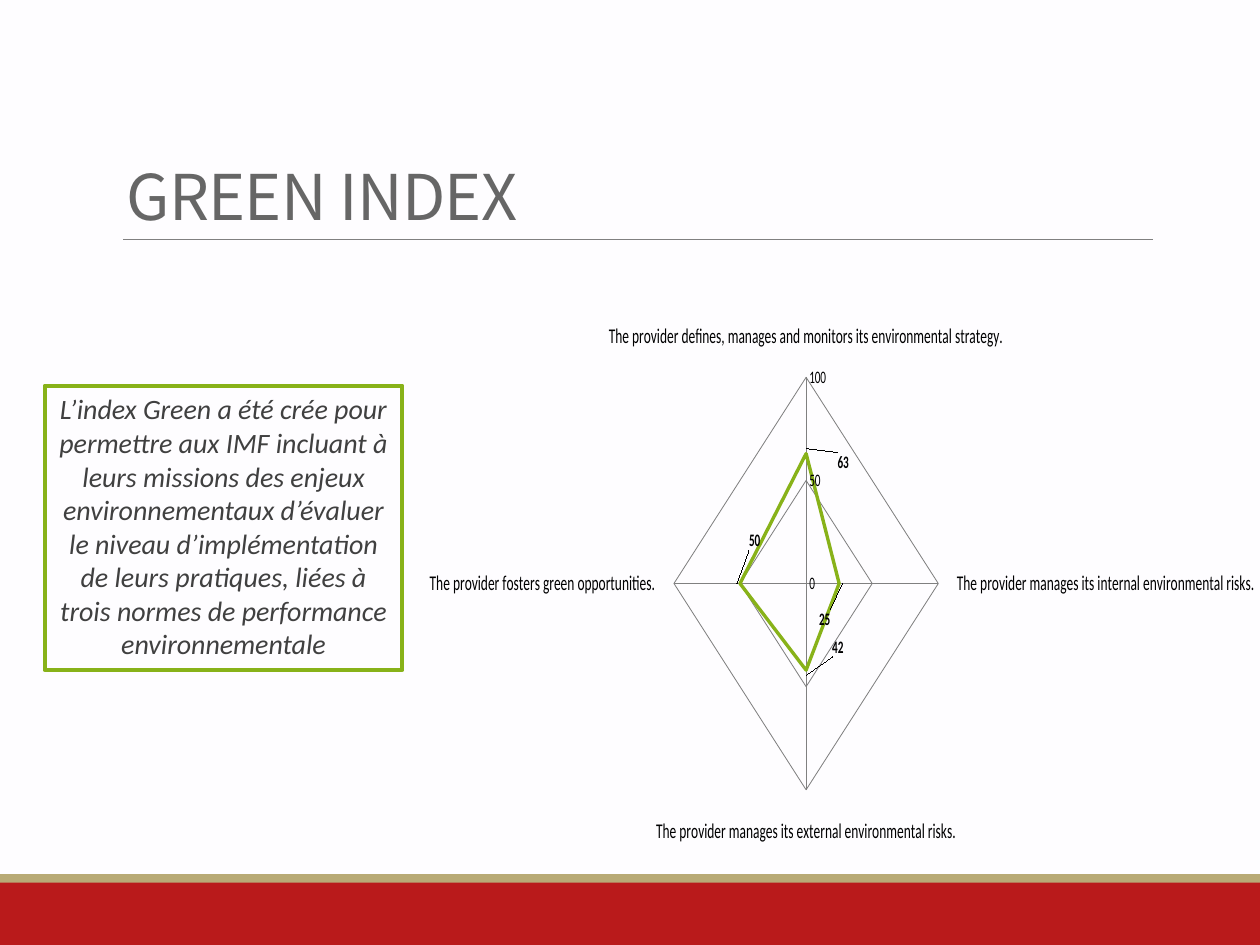
from dataclasses import dataclass

from lxml.etree import SubElement
from pptx import Presentation
from pptx.chart.data import CategoryChartData
from pptx.dml.color import RGBColor
from pptx.enum.chart import XL_CHART_TYPE, XL_TICK_MARK
from pptx.enum.shapes import MSO_CONNECTOR, MSO_SHAPE
from pptx.enum.text import MSO_ANCHOR, PP_ALIGN
from pptx.oxml import parse_xml
from pptx.oxml.ns import nsdecls, qn
from pptx.util import Pt


@dataclass(frozen=True)
class Theme:
    background: str = "FEFDFF"
    red: str = "B91A1B"
    sand: str = "B8AA76"
    green: str = "88B219"
    gray: str = "808080"
    title: str = "666666"
    body: str = "404040"
    black: str = "000000"
    title_font: str = "Noto Sans CJK KR"
    body_font: str = "Calibri"
    title_size: float = 36
    body_size: float = 16
    category_size: float = 12
    label_size: float = 10


def rgb(value):
    return RGBColor.from_string(value)


def layout_xml(x, y, w=None, h=None):
    if w is None:
        values = [("x", x), ("y", y)]
    else:
        values = [("xMode", "edge"), ("yMode", "edge"),
                  ("x", x), ("y", y), ("w", w), ("h", h)]
    target = "" if w is None else '<c:layoutTarget val="inner"/>'
    body = "".join(f'<c:{name} val="{value}"/>' for name, value in values)
    return parse_xml(f'<c:layout {nsdecls("c")}><c:manualLayout>'
                     f'{target}{body}</c:manualLayout></c:layout>')


class Deck:
    def __init__(self, theme, width, height):
        self.theme = theme
        self.prs = Presentation()
        self.prs.slide_width, self.prs.slide_height = Pt(width), Pt(height)
        self.s = self.prs.slides.add_slide(self.prs.slide_layouts[5])
        fill = self.s.background.fill
        fill.solid()
        fill.fore_color.rgb = rgb(theme.background)

    def style(self, font, size, color, name=None):
        font.size = Pt(size)
        font.name = name or self.theme.body_font
        font.color.rgb = rgb(color)

    def title(self, text, x, y, w, h):
        sp = self.s.shapes.title
        sp.left, sp.top, sp.width, sp.height = Pt(x), Pt(y), Pt(w), Pt(h)
        tf = sp.text_frame
        tf.vertical_anchor = MSO_ANCHOR.BOTTOM
        p = tf.paragraphs[0]
        p.alignment = PP_ALIGN.LEFT
        p.line_spacing = 0.85
        r = p.add_run()
        r.text = text
        self.style(r.font, self.theme.title_size, self.theme.title, self.theme.title_font)
        r.font._element.set("spc", "-40")

    def rect(self, x, y, w, h, fill=None, line=None):
        sp = self.s.shapes.add_shape(MSO_SHAPE.RECTANGLE, Pt(x), Pt(y), Pt(w), Pt(h))
        sp.shadow.inherit = False
        if fill:
            sp.fill.solid()
            sp.fill.fore_color.rgb = rgb(fill)
        else:
            sp.fill.background()
        if line:
            sp.line.color.rgb = rgb(line)
            sp.line.width = Pt(2.25)
        else:
            sp.line.fill.background()
        return sp

    def text_box(self, text, x, y, w, h):
        tf = self.rect(x, y, w, h, line=self.theme.green).text_frame
        tf.word_wrap = True
        tf.vertical_anchor = MSO_ANCHOR.TOP
        p = tf.paragraphs[0]
        p.alignment = PP_ALIGN.CENTER
        r = p.add_run()
        r.text = text
        self.style(r.font, self.theme.body_size, self.theme.body)
        r.font.italic = True

    def rule(self, x1, x2, y):
        line = self.s.shapes.add_connector(
            MSO_CONNECTOR.STRAIGHT, Pt(x1), Pt(y), Pt(x2), Pt(y))
        line.line.color.rgb = rgb(self.theme.gray)
        line.line.width = Pt(0.5)
        SubElement(line._element.spPr, qn("a:effectLst"))

    def radar(self, scores, offsets, x, y, w, h):
        t = self.theme
        data = CategoryChartData()
        data.categories = list(scores)
        data.add_series("Series 1", list(scores.values()))
        chart = self.s.shapes.add_chart(
            XL_CHART_TYPE.RADAR, Pt(x), Pt(y), Pt(w), Pt(h), data).chart
        chart.has_legend = False
        chart.has_title = False
        self.style(chart.font, t.label_size, t.black)

        for axis, size in ((chart.category_axis, t.category_size),
                           (chart.value_axis, t.label_size)):
            axis.major_tick_mark = XL_TICK_MARK.NONE
            axis.minor_tick_mark = XL_TICK_MARK.NONE
            axis.has_major_gridlines = True
            for line in (axis.format.line, axis.major_gridlines.format.line):
                line.color.rgb = rgb(t.gray)
                line.width = Pt(0.75)
            self.style(axis.tick_labels.font, size, t.black)
        axis = chart.value_axis
        axis.minimum_scale, axis.maximum_scale, axis.major_unit = 0, 100, 50
        axis.tick_labels.number_format = "0"
        axis.tick_labels.number_format_is_linked = False

        plot = chart.plots[0]
        plot.vary_by_categories = False
        series = plot.series[0]
        series.smooth = False
        series.format.line.color.rgb = rgb(t.green)
        series.format.line.width = Pt(3)
        labels = series.data_labels
        labels.show_value = True
        labels.number_format = "#,##0"
        labels.number_format_is_linked = False
        self.style(labels.font, t.label_size, t.black)
        labels.font.bold = True
        for i in range(len(scores)):
            font = series.points[i].data_label.font
            self.style(font, t.label_size, t.black)
            font.bold = True
        for label, offset in zip(chart.element.xpath(".//c:dLbl"), offsets):
            label.insert(1, layout_xml(*offset))

        area = chart.element.xpath(".//c:plotArea")[0]
        for old in area.findall(qn("c:layout")):
            area.remove(old)
        area.insert(0, layout_xml(0.26, 0.2, 0.5, 0.61))


def main():
    theme = Theme()
    deck = Deck(theme, 720, 540)
    deck.rect(0, 504, 720, 36, fill=theme.red)
    deck.rect(0, 499.5, 720, 5, fill=theme.sand)
    deck.rule(70.5, 659, 136.8)
    deck.title("GREEN INDEX", 65, 22.5, 594, 114.3)
    deck.text_box(
        "L’index Green a été crée pour permettre aux IMF incluant à leurs missions "
        "des enjeux environnementaux d’évaluer le niveau d’implémentation de leurs "
        "pratiques, liées à trois normes de performance environnementale",
        25.5, 220.4, 204.5, 162.5)
    scores = {
        "The provider defines, manages and monitors its environmental strategy.": 63,
        "The provider manages its internal environmental risks.": 25,
        "The provider manages its external environmental risks.": 42,
        "The provider fosters green opportunities.": 50,
    }
    offsets = [(0.07, 0.04), (-0.05, 0.05), (0.06, -0.06), (0.05, -0.06)]
    deck.radar(scores, offsets, 245.5, 127.5, 471.5, 408)
    deck.prs.save("out.pptx")


if __name__ == "__main__":
    main()
